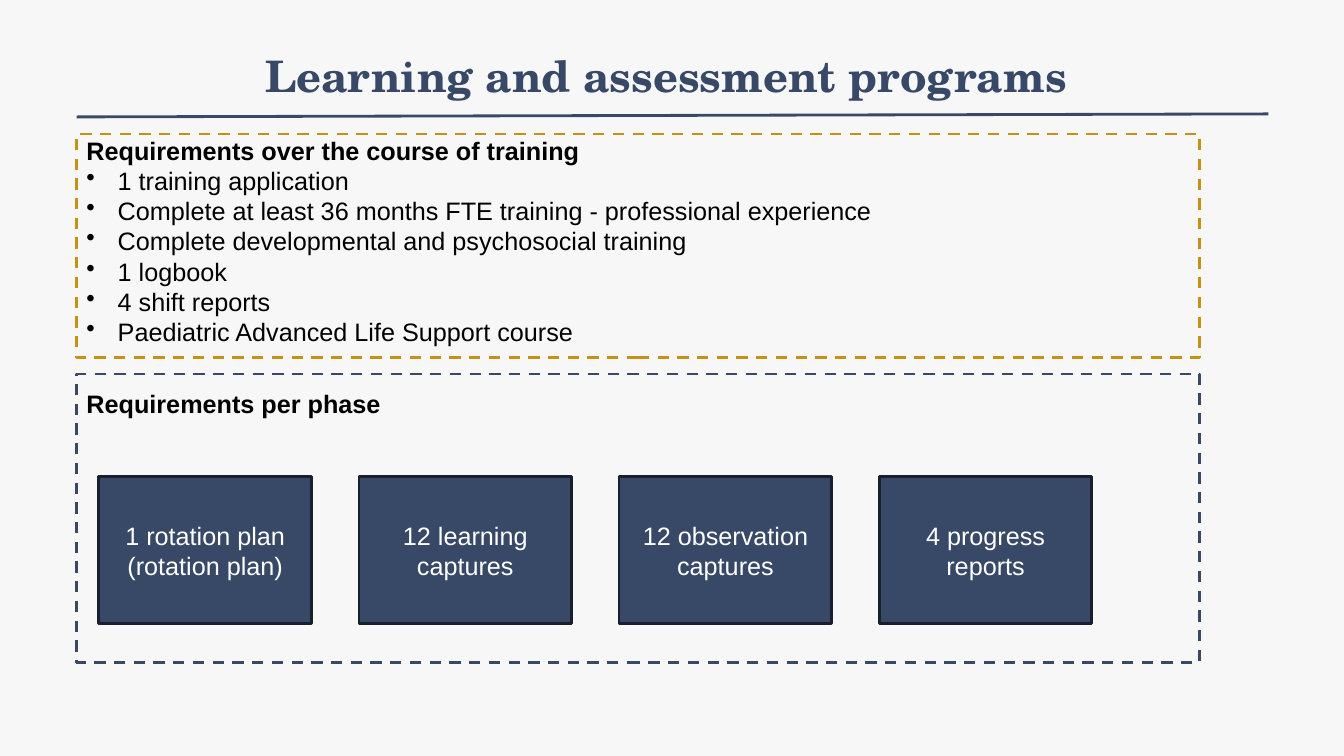
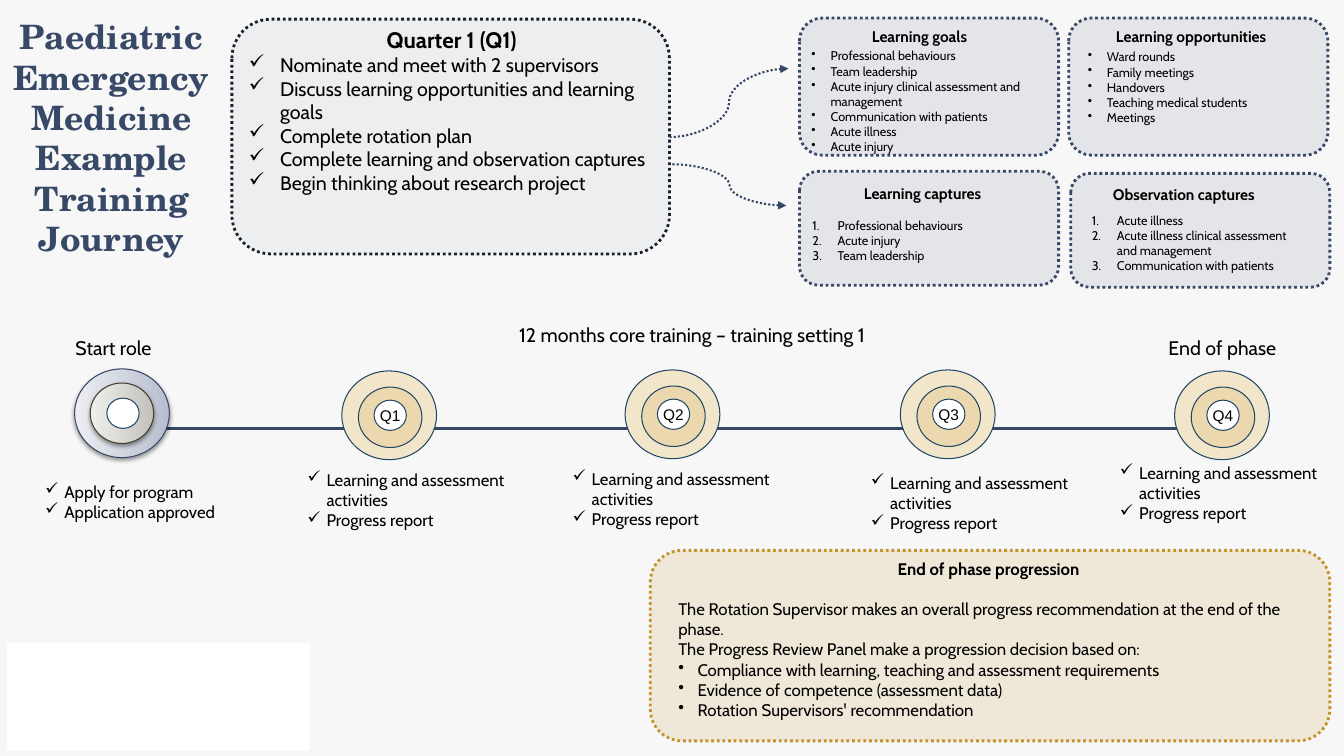
from dataclasses import dataclass

from lxml.etree import SubElement
from pptx import Presentation
from pptx.dml.color import RGBColor
from pptx.enum.dml import MSO_LINE
from pptx.enum.shapes import MSO_CONNECTOR, MSO_SHAPE
from pptx.enum.text import MSO_ANCHOR, PP_ALIGN
from pptx.oxml.ns import qn
from pptx.util import Inches, Pt

# The slide grid: one column and one row measure one inch
SLIDE_WIDTH, SLIDE_HEIGHT = Inches(13.33), Inches(7.5)
COLUMN, ROW = SLIDE_WIDTH / 13.33, SLIDE_HEIGHT / 7.5


@dataclass(frozen=True)
class Theme:
    background: str = "F7F7F7"
    navy: str = "384967"
    deep_navy: str = "19202D"
    track: str = "364766"
    ring_line: str = "204666"
    gold: str = "C69214"
    panel_gold: str = "C5932B"
    ring_outer: str = "F2E6CA"
    ring_inner: str = "D3A440"
    black: str = "000000"
    white: str = "FFFFFF"
    title_font: str = "TeX Gyre Schola"
    body_font: str = "Arial"
    journey_font: str = "Cabin"
    title: int = 31
    side_title: int = 24
    body: int = 18
    quarter_heading: int = 16
    label: int = 14
    note: int = 12
    card_heading: int = 11
    card_list: int = 9


THEME = Theme()
TITLE = dict(name=THEME.title_font, size=THEME.title, color=THEME.navy, bold=True)
SIDE_TITLE = TITLE | dict(size=THEME.side_title)
BODY = dict(name=THEME.body_font, size=THEME.body, color=THEME.black, bold=False)
BOX_LABEL = BODY | dict(color=THEME.white)
RING_LABEL = BODY | dict(size=THEME.card_heading)
LABEL = BODY | dict(name=THEME.journey_font, size=THEME.label)
NOTE = LABEL | dict(size=THEME.note)
CARD_LIST = LABEL | dict(size=THEME.card_list)
CARD_HEADING = LABEL | dict(size=THEME.card_heading, bold=True)


@dataclass(frozen=True)
class Box:
    left: float
    top: float
    width: float
    height: float

    def inside(self, left, top, width, height):
        return Box(self.left + left, self.top + top, width, height)

    def centered(self, width, height, shift=(0, 0)):
        return self.inside((self.width - width) / 2 + shift[0],
                           (self.height - height) / 2 + shift[1], width, height)

    def lengths(self):
        return (int(self.left * COLUMN), int(self.top * ROW),
                int(self.width * COLUMN), int(self.height * ROW))


# Text helpers
def add_bullet(paragraph, bullet, indent):
    properties = paragraph._p.get_or_add_pPr()
    properties.set("marL", str(Inches(indent)))
    properties.set("indent", str(-Inches(indent)))
    if bullet == "1.":
        SubElement(properties, qn("a:buAutoNum"), type="arabicPeriod")
    else:
        SubElement(properties, qn("a:buChar"), char=bullet)


def line_of(text, style, align=PP_ALIGN.LEFT, bullet=None, indent=0.19, before=0):
    return dict(text=text, style=style, align=align, bullet=bullet,
                indent=indent, before=before)


def list_of(items, style, bullet, indent=0.19):
    return [line_of(item, style, bullet=bullet, indent=indent) for item in items]


def write(frame, lines, anchor=MSO_ANCHOR.TOP, wrap=True, margins=(0.1, 0.05)):
    side, edge = (Inches(margin) for margin in margins)
    settings = dict(word_wrap=wrap, vertical_anchor=anchor, margin_left=side,
                    margin_right=side, margin_top=edge, margin_bottom=edge)
    for name, value in settings.items():
        setattr(frame, name, value)
    for index, line in enumerate(lines):
        paragraph = frame.add_paragraph() if index else frame.paragraphs[0]
        paragraph.alignment = line["align"]
        if line["before"]:
            paragraph.space_before = Pt(line["before"])
        if line["bullet"]:
            add_bullet(paragraph, line["bullet"], line["indent"])
        run = paragraph.add_run()
        run.text = line["text"]
        style = line["style"]
        formats = dict(name=style["name"], size=Pt(style["size"]), bold=style["bold"])
        for name, value in formats.items():
            setattr(run.font, name, value)
        run.font.color.rgb = RGBColor.from_string(style["color"])


def add_text(slide, box, lines, **settings):
    write(slide.shapes.add_textbox(*box.lengths()).text_frame, lines, **settings)


# Shape helpers
def set_line(line, color, width, dash=None):
    line.color.rgb = RGBColor.from_string(color)
    line.width = Pt(width)
    if dash:
        line.dash_style = dash


def add_panel(slide, kind, box, line, fill=None, opacity=100):
    shape = slide.shapes.add_shape(kind, *box.lengths())
    shape.shadow.inherit = False
    set_line(shape.line, *line)
    if fill is None:
        shape.fill.background()
    elif isinstance(fill, tuple):
        shape.fill.gradient()
        shape.fill.gradient_angle = 180
        for stop, color in zip(shape.fill.gradient_stops, fill):
            stop.color.rgb = RGBColor.from_string(color)
    else:
        shape.fill.solid()
        shape.fill.fore_color.rgb = RGBColor.from_string(fill)
        if opacity < 100:
            color = shape._element.spPr.find(f"{qn('a:solidFill')}/{qn('a:srgbClr')}")
            SubElement(color, qn("a:alpha"), val=str(opacity * 1000))
    return shape


def add_soft_shadow(shape):
    effects = shape._element.spPr.find(qn("a:effectLst"))
    shadow = SubElement(effects, qn("a:outerShdw"), blurRad=str(Pt(3.1)),
                        dist=str(Pt(1.6)), dir="5400000", rotWithShape="0")
    color = SubElement(shadow, qn("a:srgbClr"), val=THEME.black)
    SubElement(color, qn("a:alpha"), val="38000")


def add_line(slide, start, end, line, kind=MSO_CONNECTOR.STRAIGHT, arrow=False):
    points = [int(length) for x, y in (start, end) for length in (x * COLUMN, y * ROW)]
    connector = slide.shapes.add_connector(kind, *points)
    set_line(connector.line, *line)
    if arrow:
        SubElement(connector.line._get_or_add_ln(), qn("a:tailEnd"), type="triangle")
    SubElement(connector._element.spPr, qn("a:effectLst"))


def new_slide(presentation):
    slide = presentation.slides.add_slide(presentation.slide_layouts[6])
    slide.background.fill.solid()
    slide.background.fill.fore_color.rgb = RGBColor.from_string(THEME.background)
    return slide


def add_title(slide, box, lines, style):
    add_text(slide, box, [line_of(text, style, PP_ALIGN.CENTER) for text in lines],
             anchor=MSO_ANCHOR.MIDDLE, margins=(0.07, 0.04))


# Programs slide
def add_training_requirements(slide, box):
    add_panel(slide, MSO_SHAPE.RECTANGLE, box, (THEME.gold, 2, MSO_LINE.DASH))
    items = ["1 training application",
             "Complete at least 36 months FTE training - professional experience",
             "Complete developmental and psychosocial training",
             "1 logbook", "4 shift reports", "Paediatric Advanced Life Support course"]
    heading = line_of("Requirements over the course of training", BODY | dict(bold=True))
    add_text(slide, box.inside(0, -0.04, 9.84, 2.52),
             [heading] + list_of(items, BODY, "•", 0.31))


def add_phase_requirements(slide, box):
    add_panel(slide, MSO_SHAPE.RECTANGLE, box, (THEME.navy, 2, MSO_LINE.DASH))
    add_text(slide, box.inside(0, 0.09, 6.67, 0.4),
             [line_of("Requirements per phase", BODY | dict(bold=True))])
    labels = ["1 rotation plan (rotation plan)", "12 learning captures",
              "12 observation captures", "4 progress reports"]
    for index, label in enumerate(labels):
        shape = add_panel(slide, MSO_SHAPE.RECTANGLE,
                          box.inside(0.22 + 2.58 * index, 1.02, 2.11, 1.46),
                          (THEME.deep_navy, 2), THEME.navy)
        write(shape.text_frame, [line_of(label, BOX_LABEL, PP_ALIGN.CENTER)],
              anchor=MSO_ANCHOR.MIDDLE)


def build_programs_slide(presentation):
    slide = new_slide(presentation)
    add_title(slide, Box(1.6, 0.29, 10.01, 0.91),
              ["Learning and assessment programs"], TITLE)
    add_line(slide, (0.76, 1.16), (12.58, 1.13), (THEME.navy, 2))
    add_training_requirements(slide, Box(0.76, 1.33, 11.14, 2.22))
    add_phase_requirements(slide, Box(0.76, 3.71, 11.14, 2.86))


# Journey slide
def add_quarter_panel(slide, box):
    add_panel(slide, MSO_SHAPE.ROUNDED_RECTANGLE, box,
              (THEME.deep_navy, 2, MSO_LINE.ROUND_DOT), THEME.navy, 5)
    heading = line_of("Quarter 1 (Q1)", LABEL | dict(size=THEME.quarter_heading, bold=True),
                      PP_ALIGN.CENTER)
    tasks = ["Nominate and meet with 2 supervisors",
             "Discuss learning opportunities and learning goals", "Complete rotation plan",
             "Complete learning and observation captures",
             "Begin thinking about research project"]
    add_text(slide, box.inside(0.07, 0.02, 4.22, 2.22),
             [heading] + list_of(tasks, LABEL, "✓", 0.31))


def add_card(slide, box, title, title_at, items, list_at, list_width, bullet):
    add_panel(slide, MSO_SHAPE.ROUNDED_RECTANGLE, box,
              (THEME.navy, 2, MSO_LINE.ROUND_DOT), THEME.navy, 10)
    add_text(slide, box.inside(*title_at, 1.8, 0.29), [line_of(title, CARD_HEADING)],
             wrap=False)
    indent = 0.25 if bullet == "1." else 0.19
    add_text(slide, box.inside(*list_at, list_width, 0.9),
             list_of(items, CARD_LIST, bullet, indent))


def add_cards(slide):
    add_card(slide, Box(7.93, 0.18, 2.57, 1.36), "Learning goals", (0.62, 0.04),
             ["Professional behaviours", "Team leadership",
              "Acute injury clinical assessment and management",
              "Communication with patients", "Acute illness", "Acute injury"],
             (0.02, 0.25), 2.68, "•")
    add_card(slide, Box(10.6, 0.18, 2.57, 1.36), "Learning opportunities", (0.37, 0.04),
             ["Ward rounds", "Family meetings", "Handovers",
              "Teaching medical students", "Meetings"], (0.09, 0.26), 2.28, "•")
    add_card(slide, Box(7.93, 1.7, 2.57, 1.13), "Learning captures", (0.54, 0.08),
             ["Professional behaviours", "Acute injury", "Team leadership"],
             (0.03, 0.41), 2.28, "1.")
    add_card(slide, Box(10.62, 1.72, 2.57, 1.13), "Observation captures", (0.32, 0.07),
             ["Acute illness", "Acute illness clinical assessment and management",
              "Communication with patients"], (0.11, 0.34), 2.28, "1.")


def add_milestone(slide, box, label, notes, notes_box):
    rings = [(box, THEME.ring_outer, THEME.ring_line, 100),
             (box.centered(0.63, 0.6, (0.01, 0.02)), THEME.ring_inner, THEME.ring_line, 20)]
    if not label:
        rings = [(box, ("B8BECE", "ECEEF2"), THEME.track, 100),
                 (box.centered(0.63, 0.6), ("C3C1BC", "EFEFED"), "423D29", 100)]
    for ring_box, fill, color, opacity in rings:
        ring = add_panel(slide, MSO_SHAPE.OVAL, ring_box, (color, 0.75), fill, opacity)
        if not label:
            add_soft_shadow(ring)
    core = add_panel(slide, MSO_SHAPE.OVAL, box.centered(0.32, 0.3, (0.01, 0)),
                     (THEME.ring_line, 0.75), THEME.white)
    if label:
        write(core.text_frame, [line_of(label, RING_LABEL, PP_ALIGN.CENTER)],
              anchor=MSO_ANCHOR.MIDDLE, wrap=False, margins=(0, 0))
    add_text(slide, notes_box, list_of(notes, NOTE, "✓"))


def add_timeline(slide):
    add_line(slide, (0.9, 4.25), (12.34, 4.25), (THEME.track, 2.25))
    quarter_notes = ["Learning and assessment activities", "Progress report"]
    milestones = [
        (0.74, 3.66, "", ["Apply for program", "Application approved"], (0.35, 4.73, 2.16)),
        (3.39, 3.68, "Q1", quarter_notes, (2.95, 4.61, 2.19)),
        (6.2, 3.67, "Q2", quarter_notes, (5.58, 4.6, 2.62)),
        (8.93, 3.67, "Q3", quarter_notes, (8.54, 4.64, 2.19)),
        (11.65, 3.68, "Q4", quarter_notes, (11.01, 4.54, 2.32))]
    for left, top, label, notes, notes_at in milestones:
        add_milestone(slide, Box(left, top, 0.94, 0.88), label, notes, Box(*notes_at, 0.71))
    captions = [("Start role", 0.65, 3.28, 0.97), ("End of phase", 11.49, 3.28, 1.35),
                ("12 months core training – training setting 1", 5.05, 3.15, 3.76)]
    for text, left, top, width in captions:
        add_text(slide, Box(left, top, width, 0.34), [line_of(text, LABEL)], wrap=False)


def add_progression_panel(slide, box):
    add_panel(slide, MSO_SHAPE.ROUNDED_RECTANGLE, box,
              (THEME.panel_gold, 2, MSO_LINE.ROUND_DOT), THEME.panel_gold, 15)
    lines = [line_of("End of phase progression", NOTE | dict(bold=True), PP_ALIGN.CENTER),
             line_of("The Rotation Supervisor makes an overall progress recommendation "
                     "at the end of the phase.", NOTE, before=14.5),
             line_of("The Progress Review Panel make a progression decision based on:", NOTE)]
    items = ["Compliance with learning, teaching and assessment requirements",
             "Evidence of competence (assessment data)",
             "Rotation Supervisors' recommendation"]
    add_text(slide, box.inside(0.18, 0.03, 6.35, 1.72), lines + list_of(items, NOTE, "•"))


def build_journey_slide(presentation):
    slide = new_slide(presentation)
    add_timeline(slide)
    add_cards(slide)
    add_quarter_panel(slide, Box(2.3, 0.19, 4.34, 2.33))
    for start, end in [((6.64, 1.36), (7.82, 0.68)), ((6.67, 1.63), (7.8, 2.04))]:
        add_line(slide, start, end, (THEME.track, 1.5, MSO_LINE.ROUND_DOT),
                 MSO_CONNECTOR.CURVE, arrow=True)
    add_progression_panel(slide, Box(6.45, 5.46, 6.74, 1.89))
    add_title(slide, Box(0, 0.72, 2.21, 1.28),
              ["Paediatric Emergency Medicine", "Example", "Training Journey"], SIDE_TITLE)
    add_panel(slide, MSO_SHAPE.RECTANGLE, Box(0.08, 6.39, 2.98, 1.05),
              (THEME.white, 2), THEME.white)


def main():
    presentation = Presentation()
    presentation.slide_width, presentation.slide_height = SLIDE_WIDTH, SLIDE_HEIGHT
    build_programs_slide(presentation)
    build_journey_slide(presentation)
    presentation.save("out.pptx")


if __name__ == "__main__":
    main()
